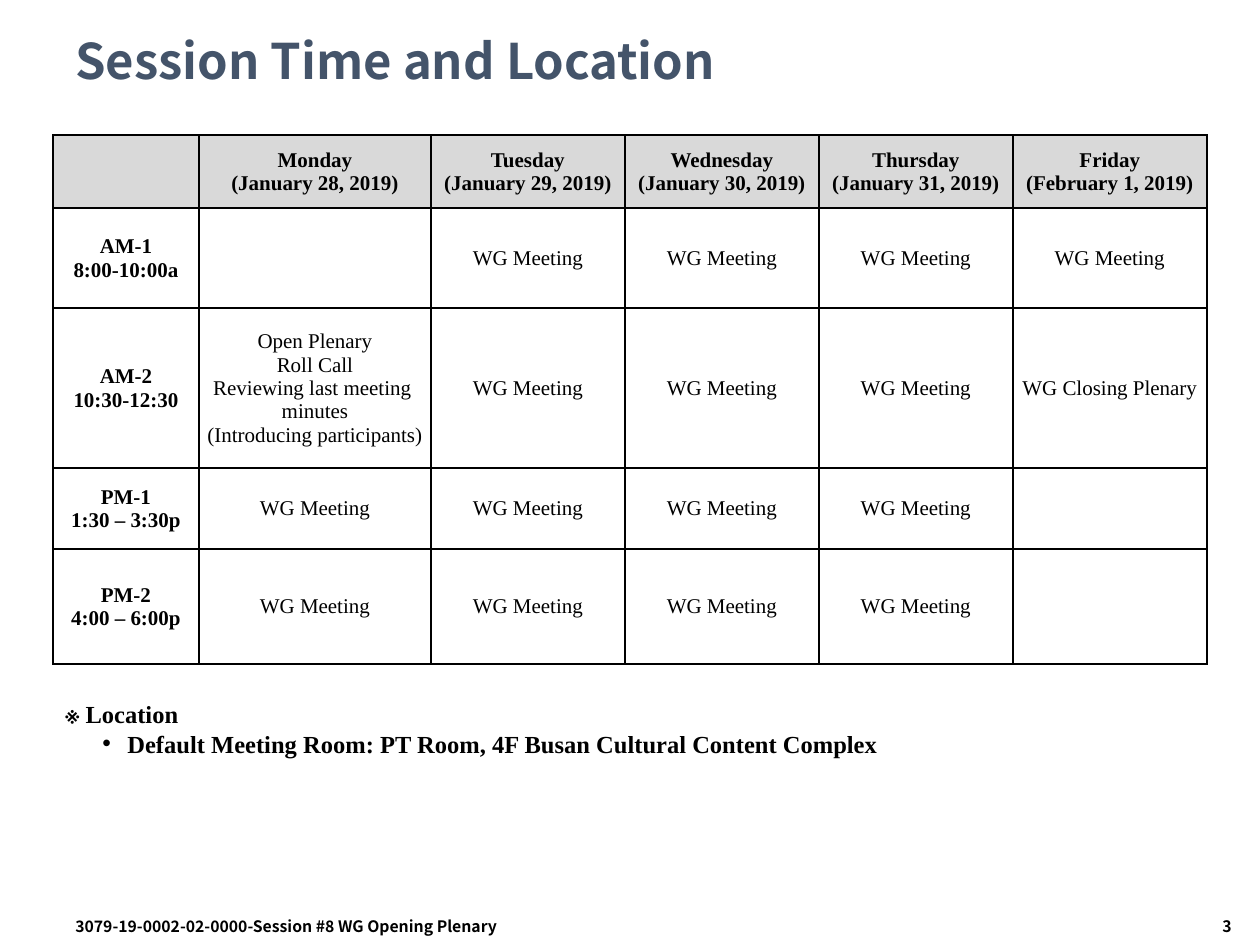
"""Build the session time and location slide."""
import pptx
import pptx.dml.color
import pptx.enum.text
import pptx.oxml
import pptx.oxml.ns
import pptx.util

ALIGN = pptx.enum.text.PP_ALIGN
MID = pptx.enum.text.MSO_ANCHOR.MIDDLE
SANS, SERIF = "Noto Sans CJK KR", "Times New Roman"
NS = pptx.oxml.ns.nsdecls("a")


def px(n):
    return pptx.util.Emu(round(n * 914400 / 126))


def write(frame, lines, size, font, bold=True, align=ALIGN.LEFT, color="000000"):
    frame.word_wrap = True
    for i, line in enumerate(lines):
        para = frame.add_paragraph() if i else frame.paragraphs[0]
        para.alignment = align
        for j, part in enumerate(line.split("\n")):
            if j:
                para.add_line_break()
            run = para.add_run()
            run.text = part
            run.font.size = pptx.util.Pt(size)
            run.font.name = font
            run.font.bold = bold
            run.font.color.rgb = pptx.dml.color.RGBColor.from_string(color)


deck = pptx.Presentation()
deck.slide_width, deck.slide_height = px(1260), px(945)
slide = deck.slides.add_slide(deck.slide_layouts[6])
shapes = slide.shapes

title = shapes.add_textbox(px(63), px(21), px(1134), px(85)).text_frame
write(title, ["Session Time and Location"], 28, SANS, color="44546A")
title.vertical_anchor = MID
title.paragraphs[0].line_spacing = 0.9

label = "3079-19-0002-02-0000-Session #8 WG Opening Plenary"
for left, width, text, align in [(63, 557, label, ALIGN.LEFT), (1040, 204, "3", ALIGN.RIGHT)]:
    foot = shapes.add_textbox(px(left), px(911), px(width), px(34)).text_frame
    write(foot, [text], 9, SANS, align=align)

place = shapes.add_textbox(px(53), px(693), px(1155), px(72)).text_frame
room = "Default Meeting Room: PT Room, 4F Busan Cultural Content Complex"
write(place, ["※ Location", room], 14, SERIF)
props = place.paragraphs[1]._p.get_or_add_pPr()
props.set("marL", str(px(62)))
props.set("indent", str(px(-25)))
props.append(pptx.oxml.parse_xml(f'<a:buFont {NS} typeface="Arial"/>'))
props.append(pptx.oxml.parse_xml(f'<a:buChar {NS} char="•"/>'))

meet = ["WG Meeting"]
opening = ["Open Plenary", "Roll Call", "Reviewing last meeting \nminutes",
           "(Introducing participants)"]
days = [["Monday", "(January 28, 2019)"], ["Tuesday", "(January 29, 2019)"],
        ["Wednesday", "(January 30, 2019)"], ["Thursday", "(January 31, 2019)"],
        ["Friday", "(February 1, 2019)"]]
rows = [
    [[], *days],
    [["AM-1", "8:00-10:00a"], [], *[meet] * 4],
    [["AM-2", "10:30-12:30"], opening, *[meet] * 3, ["WG Closing Plenary"]],
    [["PM-1", "1:30 – 3:30p"], *[meet] * 4, []],
    [["PM-2", "4:00 – 6:00p"], *[meet] * 4, []],
]
wide = [146, 232] + [194] * 4
high = [73, 100, 160, 81, 115]
grid = shapes.add_table(len(high), len(wide), px(53), px(135), px(sum(wide)), px(sum(high))).table
grid.first_row = grid.horz_banding = False
for col, width in zip(grid.columns, wide):
    col.width = px(width)
for row, height in zip(grid.rows, high):
    row.height = px(height)

for r, row in enumerate(rows):
    for c, lines in enumerate(row):
        cell = grid.cell(r, c)
        cell.vertical_anchor = MID
        cell.margin_left = cell.margin_right = cell.margin_top = px(1)
        cell.margin_bottom = 0
        for side in "LRTB":
            cell._tc.get_or_add_tcPr().append(pptx.oxml.parse_xml(
                f'<a:ln{side} {NS} w="12700"><a:solidFill><a:srgbClr val="000000"/>'
                f'</a:solidFill></a:ln{side}>'))
        if r == 0:
            cell.fill.solid()
            cell.fill.fore_color.rgb = pptx.dml.color.RGBColor.from_string("D9D9D9")
        else:
            cell.fill.background()
        write(cell.text_frame, lines, 12, SERIF, r == 0 or c == 0, ALIGN.CENTER)

deck.save("out.pptx")
